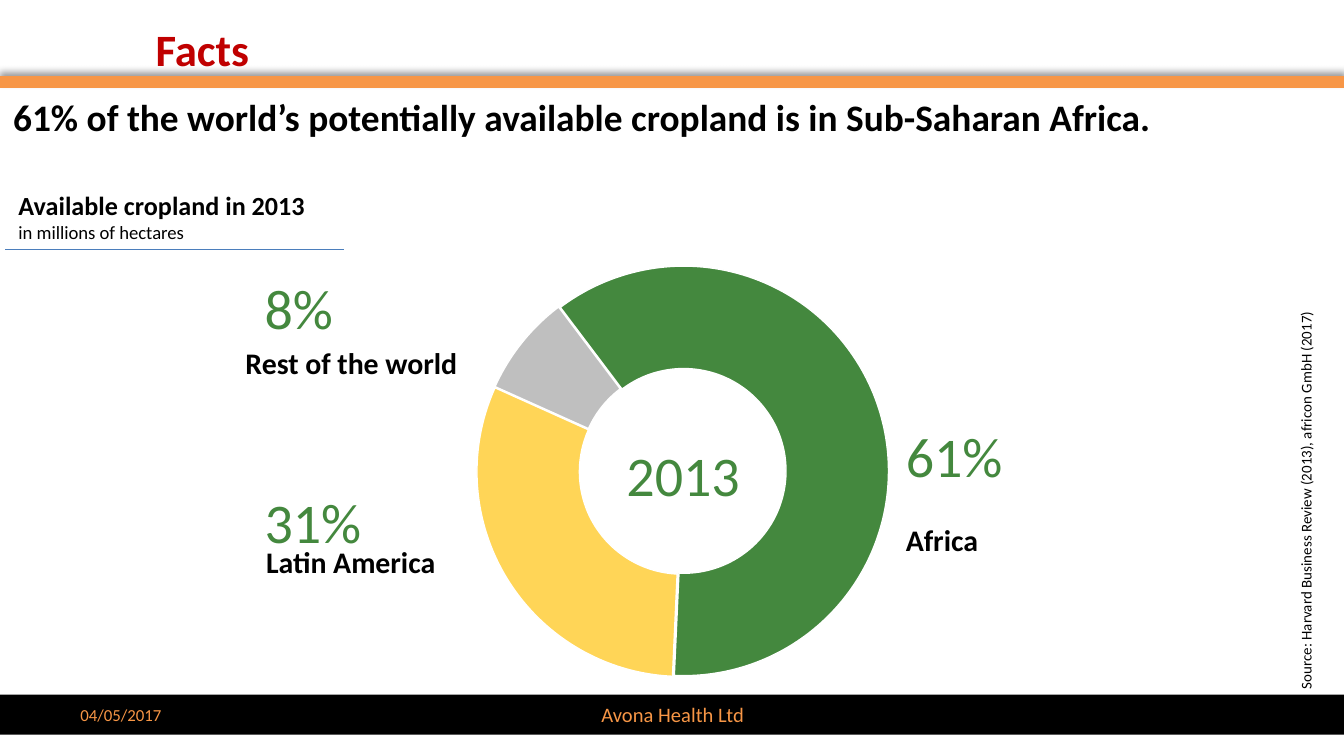
"""Build the slide on available cropland in 2013 with its doughnut chart."""
from lxml import etree
from pptx import Presentation
from pptx.chart.data import CategoryChartData
from pptx.dml.color import RGBColor
from pptx.enum.chart import XL_CHART_TYPE as ChartType
from pptx.enum.shapes import MSO_CONNECTOR as Connector, MSO_SHAPE as Shape
from pptx.enum.text import MSO_ANCHOR as Anchor, PP_ALIGN as Align
from pptx.oxml import parse_xml
from pptx.oxml.ns import nsdecls, qn
from pptx.util import Cm, Pt

FONT = "Calibri"
COLORS = {
    "orange": "F79646", "black": "000000", "red": "C00000", "blue": "4B7EBC",
    "green": "44883E", "yellow": "FFC000", "grey": "BFBFBF", "white": "FFFFFF",
}


def color(name):
    return RGBColor.from_string(COLORS[name])


def add_text(place, lines, tint="black", align=Align.LEFT, anchor=Anchor.TOP, inset=True):
    box = slide.shapes.add_textbox(*map(Cm, place))
    frame = box.text_frame
    frame.word_wrap = True
    frame.vertical_anchor = anchor
    if not inset:
        frame.margin_left = frame.margin_right = frame.margin_top = frame.margin_bottom = 0
    frame.text = "\n".join(text for text, size, bold in lines)
    for para, (text, size, bold) in zip(frame.paragraphs, lines):
        para.alignment = align
        for span in para.runs:
            span.font.name = FONT
            span.font.size = Pt(size)
            span.font.bold = bold
            span.font.color.rgb = color(tint)
    return box


deck = Presentation()
deck.slide_width, deck.slide_height = Cm(25.4), Cm(14.29)
slide = deck.slides.add_slide(deck.slide_layouts[6])

for left, right, y, tint, width in [
    (0, 25.4, 1.55, "orange", 6),
    (0.1, 6.5, 4.72, "blue", 0.75),
]:
    rule = slide.shapes.add_connector(Connector.STRAIGHT, Cm(left), Cm(y), Cm(right), Cm(y))
    rule.line.color.rgb = color(tint)
    rule.line.width = Pt(width)
    effects = etree.SubElement(rule._element.spPr, qn("a:effectLst"))
    if tint == "orange":
        effects.append(parse_xml(
            f'<a:outerShdw {nsdecls("a")} blurRad="{Pt(4)}" dist="{Pt(3)}" dir="16200000" '
            f'rotWithShape="0"><a:srgbClr val="{COLORS["black"]}"><a:alpha val="40000"/>'
            '</a:srgbClr></a:outerShdw>'))

footer = slide.shapes.add_shape(Shape.RECTANGLE, 0, Cm(13.13), Cm(25.4), Cm(0.76))
footer.shadow.inherit = False
footer.fill.solid()
footer.fill.fore_color.rgb = color("black")
footer.line.fill.background()
add_text((8.69, 13.13, 8.05, 0.76), [("Avona Health Ltd", 11, False)], "orange",
         Align.CENTER, Anchor.MIDDLE)
add_text((1.27, 13.13, 5.92, 0.76), [("04/05/2017", 9, False)], "orange", anchor=Anchor.MIDDLE)

add_text((2.69, 0.28, 17.4, 0.71), [("Facts", 24, True)], "red")
add_text((0, 1.65, 23.9, 0.89), [
    ("61% of the world’s potentially available cropland is in Sub-Saharan Africa.", 20, True)])
add_text((0.1, 3.45, 12.22, 1.27), [
    ("Available cropland in 2013", 14, True), ("in millions of hectares", 10, False)])
source = add_text((20.19, 8.48, 8.99, 0.61), [
    ("Source: Harvard Business Review (2013), africon GmbH (2017)", 8, False)])
source.rotation = 270

data = CategoryChartData()
data.categories = ["1", "2", "3"]
data.add_series("Series 1", (61, 31, 8))
chart = slide.shapes.add_chart(
    ChartType.DOUGHNUT, Cm(4.01), Cm(4.9), Cm(15.88), Cm(9.78), data).chart
chart.has_legend = chart.has_title = False
chart.font.name = FONT
chart.font.size = Pt(18)
chart.font.color.rgb = color("black")
plot = chart.plots[0]
plot.vary_by_categories = True
plot.has_data_labels = False
series = plot.series[0]
for index, tint in enumerate(["green", "yellow", "grey"]):
    look = series.points[index].format
    look.fill.solid()
    look.fill.fore_color.rgb = color(tint)
    look.line.color.rgb = color("white")
    look.line.width = Pt(0.75)

space = chart._chartSpace
yellow = space.xpath(f'.//a:srgbClr[@val="{COLORS["yellow"]}"]')[0]
etree.SubElement(yellow, qn("a:alpha")).set("val", "66000")
series.format.line.color.rgb = color("white")
series.format.line.width = Pt(0.75)
series._element.find(qn("c:spPr")).addnext(parse_xml(f'<c:explosion {nsdecls("c")} val="1"/>'))
space.xpath(".//c:firstSliceAng")[0].set("val", "323")
space.xpath(".//c:holeSize")[0].set("val", "50")
space.find(qn("c:chart")).addnext(parse_xml(
    f'<c:spPr {nsdecls("c", "a")}><a:noFill/><a:ln><a:noFill/></a:ln></c:spPr>'))
area = space.xpath(".//c:plotArea")[0]
for old in area.findall(qn("c:layout")):
    area.remove(old)
layout = etree.Element(qn("c:layout"))
manual = etree.SubElement(layout, qn("c:manualLayout"))
for tag, value in [("layoutTarget", "inner"), ("xMode", "edge"), ("yMode", "edge"),
                   ("x", "0.315"), ("y", "0.012"), ("w", "0.49"), ("h", "0.796")]:
    etree.SubElement(manual, qn(f"c:{tag}")).set("val", value)
area.insert(0, layout)

for left, top, region in [
    (4.78, 10.16, "Latin America"),
    (4.39, 6.4, "Rest of the world"),
    (16.87, 9.73, "Africa"),
]:
    add_text((left, top, 8.51, 0.94), [(region, 16, True)])

for left, top, figure in [
    (17.12, 7.96, "61%"), (5, 5.17, "8%"), (5, 9.21, "31%"), (11.84, 8.32, "2013"),
]:
    add_text((left, top, 3.99, 1.28), [(figure, 30, False)], "green", inset=False)

deck.save("out.pptx")
